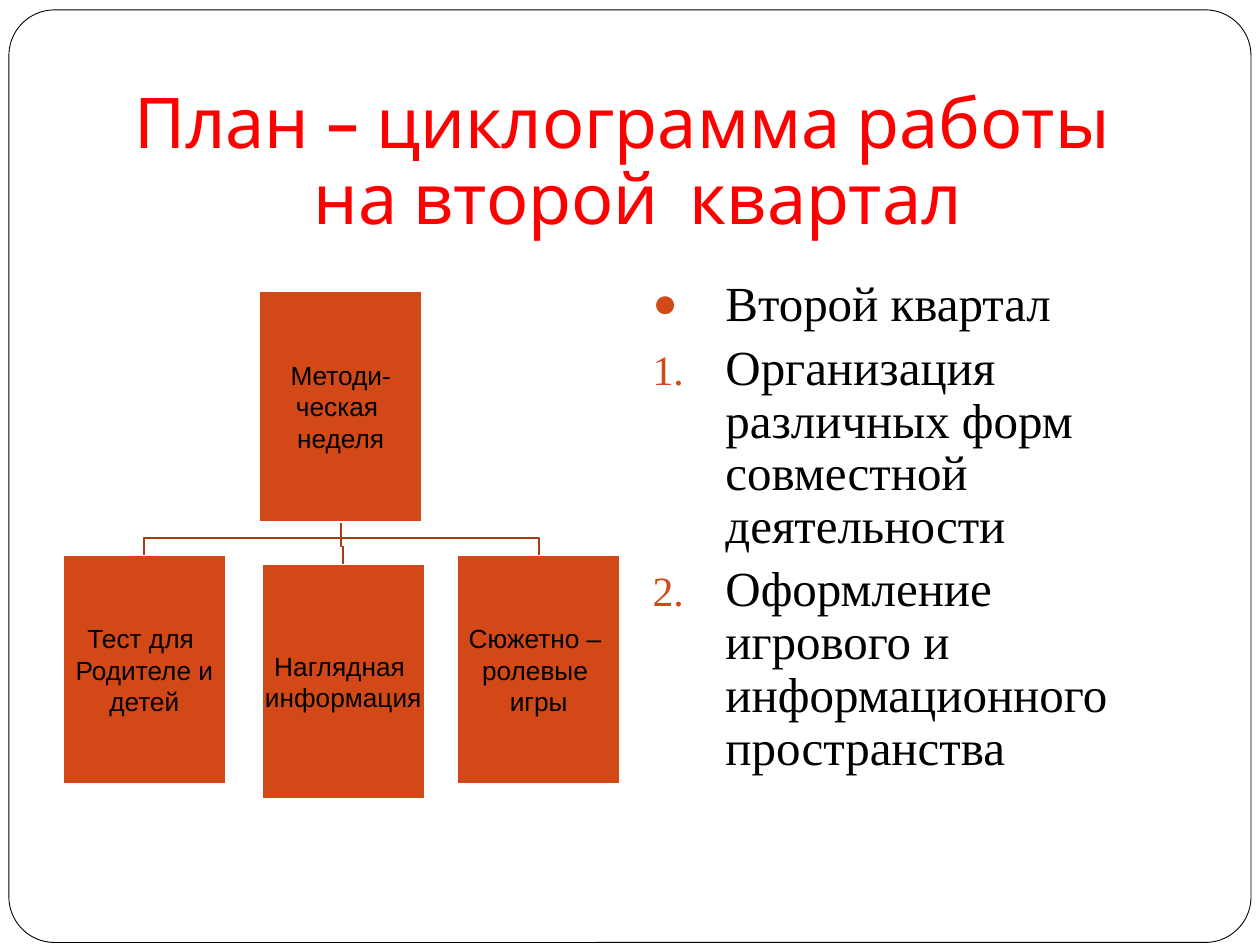
from dataclasses import dataclass

from lxml import etree
from pptx import Presentation
from pptx import util as u
from pptx.dml.color import RGBColor
from pptx.enum import shapes, text
from pptx.oxml.ns import qn


@dataclass(frozen=True)
class Theme:
    white: str = "FFFFFF"
    ink: str = "000000"
    heading: str = "FF0000"
    accent: str = "D34817"
    link: str = "A93A12"
    title_font: str = "Cabin"
    body_font: str = "Times New Roman"
    box_font: str = "Arial"
    title_size: int = 40
    body_size: int = 28
    box_size: int = 15


def set_all(target, values):
    for name, value in values.items():
        setattr(target, name, value)


def place(shape, left, top, width, height):
    names = ("left", "top", "width", "height")
    set_all(shape, dict(zip(names, map(u.Cm, (left, top, width, height)))))


class SlideBuilder:
    def __init__(self, slide, theme):
        self.slide = slide
        self.theme = theme

    def style_span(self, span, font, size, color):
        set_all(span.font, {"name": font, "size": u.Pt(size), "bold": False})
        span.font.color.rgb = RGBColor.from_string(color)

    def paint(self, shape, fill, line, width):
        shape.shadow.inherit = False
        if fill:
            shape.fill.solid()
            shape.fill.fore_color.rgb = RGBColor.from_string(fill)
        else:
            shape.fill.background()
        shape.line.color.rgb = RGBColor.from_string(line)
        shape.line.width = u.Pt(width)

    def frame(self, left, top, width, height):
        """Draw the rounded page border behind everything else."""
        border = self.slide.shapes.add_shape(
            shapes.MSO_SHAPE.ROUNDED_RECTANGLE,
            *map(u.Cm, (left, top, width, height)))
        border.adjustments[0] = 0.049
        self.paint(border, self.theme.white, self.theme.ink, 0.5)
        self.slide.shapes._spTree.insert(2, border._element)

    def title(self, lines, bounds):
        holder = self.slide.shapes.title
        place(holder, *bounds)
        set_all(holder.text_frame, {
            "word_wrap": True,
            "auto_size": text.MSO_AUTO_SIZE.NONE,
            "vertical_anchor": text.MSO_ANCHOR.BOTTOM,
            "margin_bottom": u.Cm(0.25),
        })
        para = holder.text_frame.paragraphs[0]
        set_all(para, {"alignment": text.PP_ALIGN.CENTER, "line_spacing": 0.9})
        for index, line in enumerate(lines):
            if index:
                para.add_line_break()
            span = para.add_run()
            span.text = line
            self.style_span(span, self.theme.title_font,
                            self.theme.title_size, self.theme.heading)

    def bullet(self, para, tag, attributes):
        """Give a paragraph a hanging accent bullet or number."""
        props = para._p.get_or_add_pPr()
        props.set("marL", str(u.Cm(1.47)))
        props.set("indent", str(-u.Cm(1.47)))
        color = etree.SubElement(props, qn("a:buClr"))
        etree.SubElement(color, qn("a:srgbClr"), val=self.theme.accent)
        etree.SubElement(props, qn("a:buSzPct"), val="85000")
        etree.SubElement(props, qn("a:buFont"), typeface=self.theme.body_font)
        etree.SubElement(props, qn(tag), attributes)

    def body(self, heading, items, bounds):
        holder = self.slide.placeholders[1]
        place(holder, *bounds)
        frame = holder.text_frame
        set_all(frame, {"word_wrap": True,
                        "auto_size": text.MSO_AUTO_SIZE.NONE})
        for index, words in enumerate([heading, *items]):
            para = frame.add_paragraph() if index else frame.paragraphs[0]
            set_all(para, {"line_spacing": 0.9, "space_before": u.Pt(5.8)})
            if index:
                self.bullet(para, "a:buAutoNum", {"type": "arabicPeriod"})
            else:
                self.bullet(para, "a:buChar", {"char": "●"})
            span = para.add_run()
            span.text = words
            self.style_span(span, self.theme.body_font,
                            self.theme.body_size, self.theme.ink)

    def box(self, lines, left, top, width, height):
        shape = self.slide.shapes.add_shape(
            shapes.MSO_SHAPE.RECTANGLE,
            *map(u.Cm, (left, top, width, height)))
        self.paint(shape, self.theme.accent, self.theme.white, 1)
        frame = shape.text_frame
        sides = ("left", "top", "right", "bottom")
        set_all(frame, {f"margin_{side}": u.Cm(0.03) for side in sides})
        set_all(frame, {"word_wrap": True,
                        "vertical_anchor": text.MSO_ANCHOR.MIDDLE})
        for index, line in enumerate(lines):
            para = frame.add_paragraph() if index else frame.paragraphs[0]
            para.alignment = text.PP_ALIGN.CENTER
            span = para.add_run()
            span.text = line
            self.style_span(span, self.theme.box_font,
                            self.theme.box_size, self.theme.ink)

    def branch(self, start, end, drop=0.36):
        """Draw an elbow that turns a fixed drop above its end."""
        turn = end[1] - drop
        points = [start, (start[0], turn), (end[0], turn), end]
        corners = [(u.Cm(x), u.Cm(y)) for x, y in points]
        builder = self.slide.shapes.build_freeform(*corners[0])
        builder.add_line_segments(corners[1:], close=False)
        self.paint(builder.convert_to_shape(), None, self.theme.link, 1)


def main():
    deck = Presentation()
    set_all(deck, {"slide_width": u.Cm(25.4), "slide_height": u.Cm(19.05)})
    page = SlideBuilder(deck.slides.add_slide(deck.slide_layouts[1]), Theme())

    page.frame(0.18, 0.2, 25.04, 18.8)
    page.title(["План – циклограмма работы ", " на второй  квартал"],
               (1.27, 1.27, 22.86, 3.81))

    box_width = 3.28
    root = (5.23, 5.87, box_width, 4.65)
    children = [
        (["Тест для ", "Родителе и детей"], (1.27, 11.2, box_width, 4.6)),
        (["Наглядная ", "информация"], (5.28, 11.38, box_width, 4.72)),
        (["Сюжетно – ", "ролевые ", "игры"], (9.22, 11.2, box_width, 4.6)),
    ]
    root_foot = (root[0] + box_width / 2, root[1] + root[3])
    for _, (left, top, width, _) in children:
        page.branch(root_foot, (left + width / 2, top))
    page.box(["Методи-", "ческая ", "неделя"], *root)
    for lines, bounds in children:
        page.box(lines, *bounds)

    page.body("Второй квартал",
              ["Организация различных форм совместной деятельности",
               "Оформление игрового и информационного пространства"],
              (12.9, 5.51, 11.23, 10.8))
    deck.save("out.pptx")


if __name__ == "__main__":
    main()
